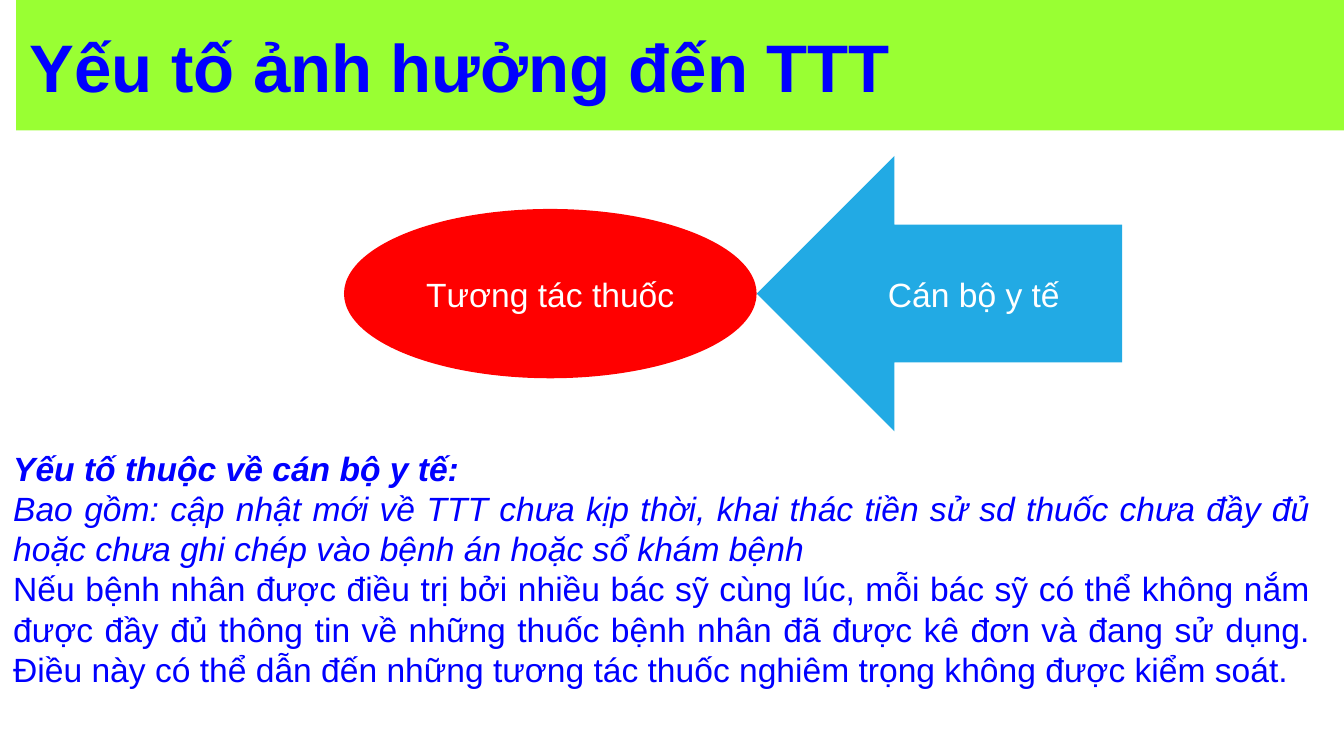
from pptx import Presentation
from pptx.dml.color import RGBColor
from pptx.enum import shapes, text
from pptx.util import Inches, Pt

BLUE, WHITE = "0000FF", "FFFFFF"


def color(value):
    return RGBColor.from_string(value)


def write(paragraph, content, size, font_color, alignment, **styles):
    run = paragraph.add_run()
    run.text = content
    paragraph.alignment = alignment
    formats = {"name": "Arial", "size": Pt(size), "bold": False, "italic": False}
    for name, value in {**formats, **styles}.items():
        setattr(run.font, name, value)
    run.font.color.rgb = color(font_color)


def add_block(slide, kind, box, fill):
    shape = slide.shapes.add_shape(kind, *map(Inches, box))
    shape.shadow.inherit = False
    shape.fill.solid()
    shape.fill.fore_color.rgb = color(fill)
    shape.line.fill.background()
    shape.text_frame.word_wrap = True
    shape.text_frame.vertical_anchor = text.MSO_ANCHOR.MIDDLE
    return shape.text_frame.paragraphs[0]


def add_title(slide, box):
    paragraph = add_block(slide, shapes.MSO_SHAPE.RECTANGLE, box, "99FF33")
    write(paragraph, "Yếu tố ảnh hưởng đến TTT", 36, BLUE, text.PP_ALIGN.LEFT, bold=True)


def add_diagram(slide, box):
    left, top, width, height = box
    ellipse_width, ellipse_height = 3.07, 1.26
    ellipse_top = top + (height - ellipse_height) / 2
    parts = [
        (shapes.MSO_SHAPE.LEFT_ARROW, "22AAE4", "Cán bộ y tế",
         (left + ellipse_width, top, width - ellipse_width, height)),
        (shapes.MSO_SHAPE.OVAL, "FF0000", "Tương tác thuốc",
         (left, ellipse_top, ellipse_width, ellipse_height)),
    ]
    for kind, fill, label, part_box in parts:
        paragraph = add_block(slide, kind, part_box, fill)
        write(paragraph, label, 18, WHITE, text.PP_ALIGN.CENTER)


def add_explanation(slide, box):
    frame = slide.shapes.add_textbox(*map(Inches, box)).text_frame
    frame.word_wrap = True
    frame.auto_size = text.MSO_AUTO_SIZE.SHAPE_TO_FIT_TEXT
    frame.margin_right = Inches(0.25)
    entries = [
        ("Yếu tố thuộc về cán bộ y tế:", text.PP_ALIGN.LEFT,
         {"bold": True, "italic": True}),
        ("Bao gồm: cập nhật mới về TTT chưa kịp thời, khai thác tiền sử sd thuốc "
         "chưa đầy đủ hoặc chưa ghi chép vào bệnh án hoặc sổ khám bệnh",
         text.PP_ALIGN.JUSTIFY, {"italic": True}),
        ("Nếu bệnh nhân được điều trị bởi nhiều bác sỹ cùng lúc, mỗi bác sỹ có thể "
         "không nắm được đầy đủ thông tin về những thuốc bệnh nhân đã được kê đơn "
         "và đang sử dụng. Điều này có thể dẫn đến những tương tác thuốc nghiêm "
         "trọng không được kiểm soát.", text.PP_ALIGN.JUSTIFY, {}),
    ]
    for index, (content, alignment, styles) in enumerate(entries):
        paragraph = frame.add_paragraph() if index else frame.paragraphs[0]
        write(paragraph, content, 18, BLUE, alignment, **styles)


def main():
    presentation = Presentation()
    presentation.slide_width = Inches(10)
    presentation.slide_height = presentation.slide_width * 9 // 16
    slide = presentation.slides.add_slide(presentation.slide_layouts[6])
    add_title(slide, (0.12, 0, 9.88, 0.97))
    add_diagram(slide, (2.56, 1.16, 5.79, 2.05))
    add_explanation(slide, (0, 3.28, 10, 1.92))
    presentation.save("out.pptx")


if __name__ == "__main__":
    main()
